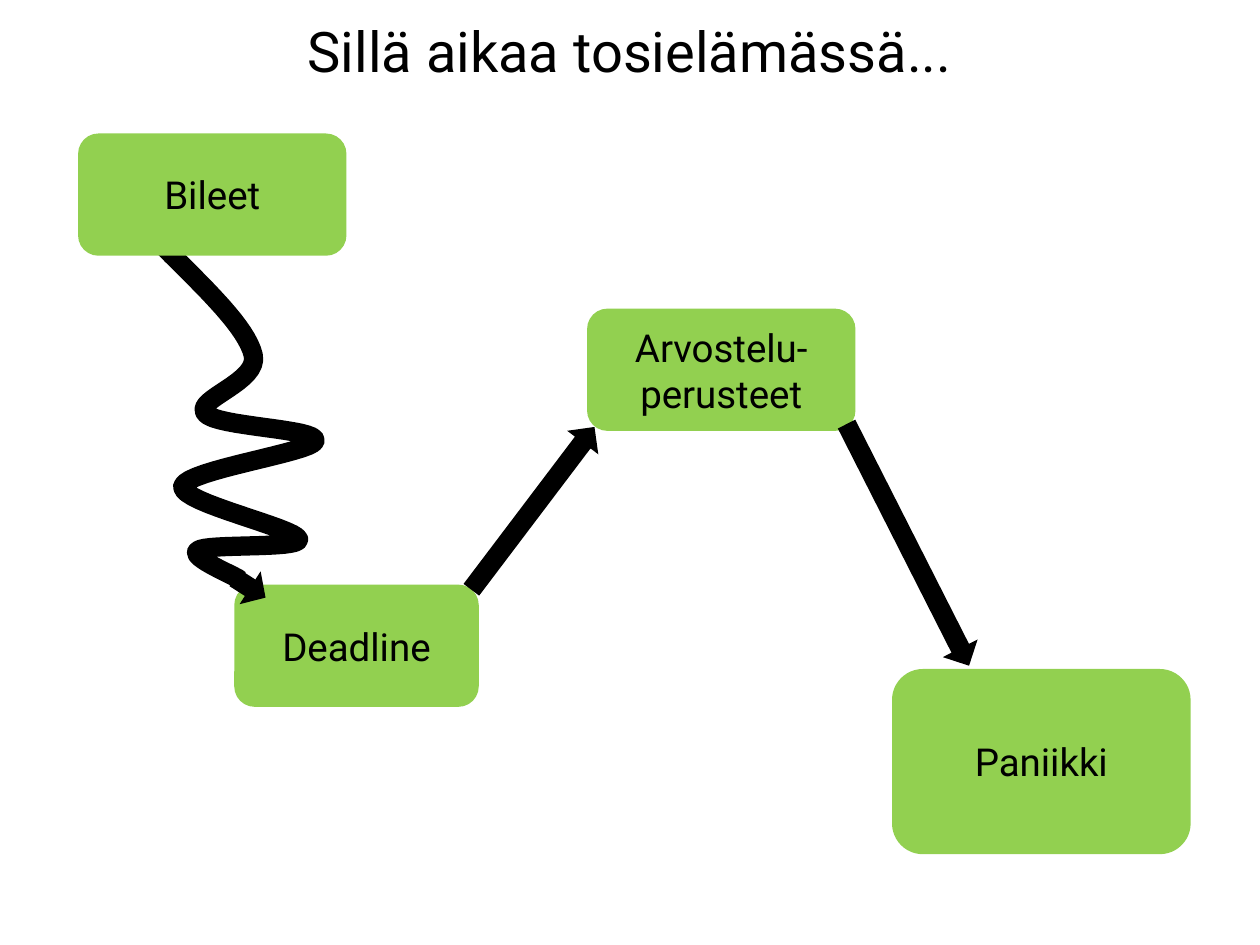
from dataclasses import dataclass

from pptx import Presentation
from pptx.dml.color import RGBColor
from pptx.enum import shapes, text
from pptx.util import Inches, Pt


@dataclass(frozen=True)
class Theme:
    font: str = "Roboto"
    ink: RGBColor = RGBColor(0, 0, 0)
    step_fill: RGBColor = RGBColor(0x92, 0xD0, 0x50)
    title_size: int = 32
    step_size: int = 22
    path_width: int = 11


THEME = Theme()
CURVE_STEPS = 16

# Label and box (left, top, width, height) of each step
STEPS = [
    ("Paniikki", (7.08, 5.31, 2.37, 1.47)),
    ("Deadline", (1.86, 4.64, 1.94, 0.97)),
    ("Arvostelu-perusteet", (4.66, 2.45, 2.13, 0.97)),
]
FIRST_STEP = ("Bileet", (0.62, 1.06, 2.13, 0.97))

# Box and rotation of each block arrow
WINDING_HEAD = ((1.84, 4.51, 0.29, 0.31), 32.6)
ARROWS = [
    ((3.42, 3.88, 1.62, 0.31), 307.1),
    ((6.13, 4.17, 2.15, 0.31), 63.1),
]

# Winding path: start, then two control points and an end per bend
WINDING_START = (1.31, 1.97)
WINDING_BENDS = [
    ((1.63, 2.29), (1.96, 2.6), (2.01, 2.82)),
    ((2.06, 3.03), (1.54, 3.17), (1.63, 3.28)),
    ((1.71, 3.39), (2.53, 3.4), (2.5, 3.5)),
    ((2.48, 3.59), (1.48, 3.73), (1.45, 3.86)),
    ((1.43, 3.99), (2.35, 4.19), (2.37, 4.28)),
    ((2.38, 4.36), (1.64, 4.31), (1.57, 4.37)),
    ((1.49, 4.42), (1.89, 4.58), (1.9, 4.6)),
]


def write(frame, words, size, anchor=text.MSO_ANCHOR.MIDDLE,
          align=text.PP_ALIGN.CENTER, color=THEME.ink):
    frame.word_wrap = True
    frame.vertical_anchor = anchor
    paragraph = frame.paragraphs[0]
    paragraph.alignment = align
    run = paragraph.add_run()
    run.text = words
    run.font.name = THEME.font
    run.font.size = Pt(size)
    run.font.color.rgb = color


def add_block(slide, preset, box, fill):
    block = slide.shapes.add_shape(preset, *map(Inches, box))
    block.shadow.inherit = False
    block.fill.solid()
    block.fill.fore_color.rgb = fill
    block.line.fill.background()
    return block


def add_step(slide, label, box):
    step = add_block(slide, shapes.MSO_SHAPE.ROUNDED_RECTANGLE, box,
                     THEME.step_fill)
    write(step.text_frame, label, THEME.step_size)


def add_arrow(slide, box, rotation):
    arrow = add_block(slide, shapes.MSO_SHAPE.RIGHT_ARROW, box, THEME.ink)
    arrow.rotation = rotation


def bezier(start, control_1, control_2, end, t):
    s = 1 - t
    return tuple(
        s**3 * a + 3 * s * s * t * b + 3 * s * t * t * c + t**3 * d
        for a, b, c, d in zip(start, control_1, control_2, end)
    )


def add_winding_path(slide, start, bends):
    points = [start]
    for bend in bends:
        corner = points[-1]
        points += [bezier(corner, *bend, i / CURVE_STEPS)
                   for i in range(1, CURVE_STEPS + 1)]
    # The builder rounds to whole units, so points are given in EMU
    first, *others = [(Inches(x), Inches(y)) for x, y in points]
    builder = slide.shapes.build_freeform(*first)
    builder.add_line_segments(others, close=False)
    path_line = builder.convert_to_shape()
    path_line.shadow.inherit = False
    path_line.fill.background()
    path_line.line.color.rgb = THEME.ink
    path_line.line.width = Pt(THEME.path_width)


def main():
    deck = Presentation()
    deck.slide_width, deck.slide_height = Inches(10), Inches(7.5)
    slide = deck.slides.add_slide(deck.slide_layouts[6])

    # Title
    title = slide.shapes.add_textbox(*map(Inches, (0.5, 0.08, 9, 0.75)))
    write(title.text_frame, "Sillä aikaa tosielämässä...", THEME.title_size,
          anchor=text.MSO_ANCHOR.TOP)

    # Later steps
    for label, box in STEPS:
        add_step(slide, label, box)

    # Winding way from party to deadline, then the straight arrows
    add_arrow(slide, *WINDING_HEAD)
    add_winding_path(slide, WINDING_START, WINDING_BENDS)
    for box, rotation in ARROWS:
        add_arrow(slide, box, rotation)

    # First step covers the start of the winding path
    add_step(slide, *FIRST_STEP)

    deck.save("out.pptx")


if __name__ == "__main__":
    main()
